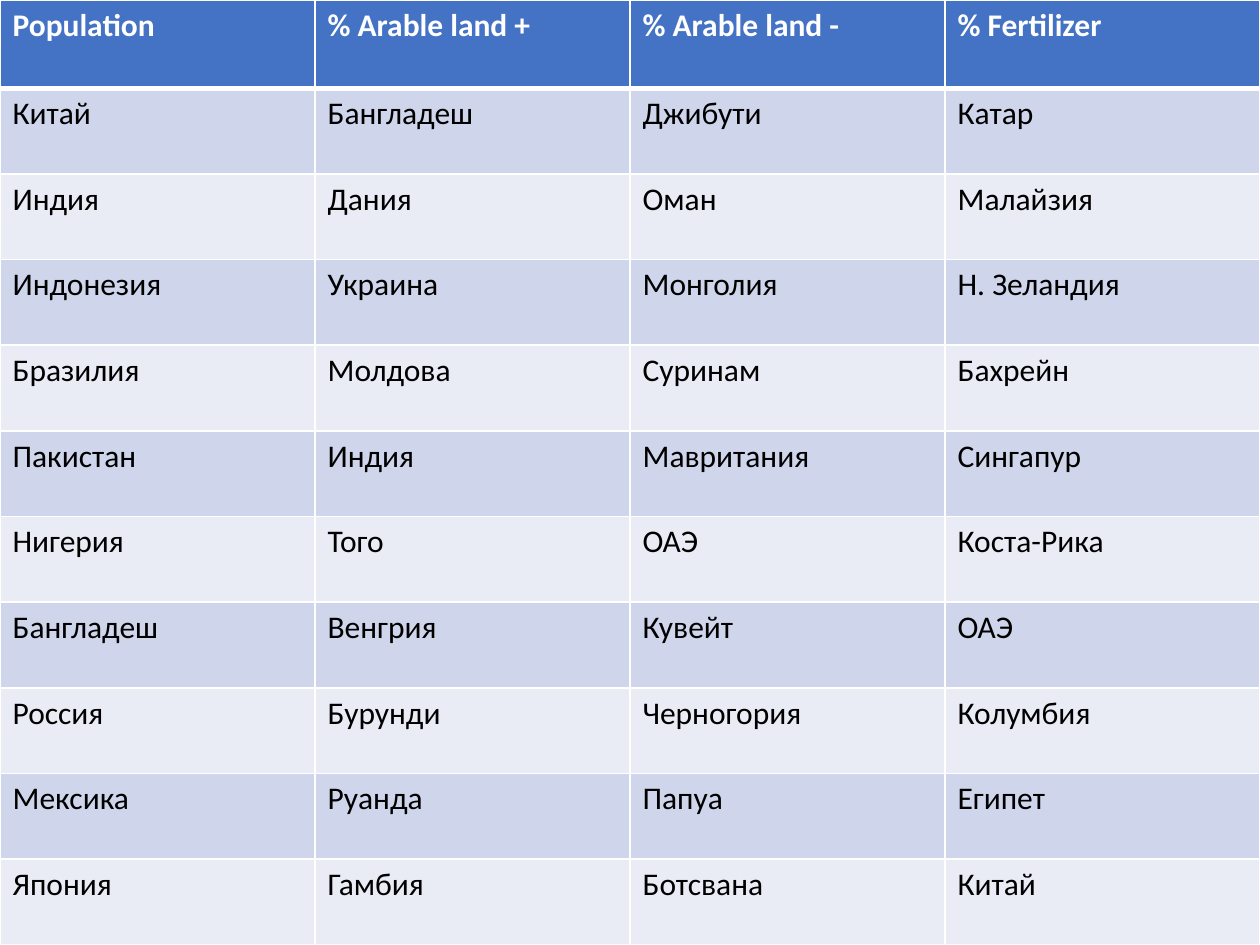
import pptx
import pptx.dml.color
import pptx.oxml
import pptx.oxml.ns
import pptx.util
from pptx.dml.color import RGBColor
from pptx.util import Inches

WHITE = RGBColor(0xFF, 0xFF, 0xFF)
BLACK = RGBColor(0x00, 0x00, 0x00)
BLUE = RGBColor(0x44, 0x72, 0xC4)
BAND_DARK = RGBColor(0xCF, 0xD5, 0xEA)
BAND_LIGHT = RGBColor(0xE9, 0xEB, 0xF5)

HEADER = ["Population", "% Arable land +", "% Arable land -", "% Fertilizer"]
COUNTRIES = [
    ["Китай", "Бангладеш", "Джибути", "Катар"],
    ["Индия", "Дания", "Оман", "Малайзия"],
    ["Индонезия", "Украина", "Монголия", "Н. Зеландия"],
    ["Бразилия", "Молдова", "Суринам", "Бахрейн"],
    ["Пакистан", "Индия", "Мавритания", "Сингапур"],
    ["Нигерия", "Того", "ОАЭ", "Коста-Рика"],
    ["Бангладеш", "Венгрия", "Кувейт", "ОАЭ"],
    ["Россия", "Бурунди", "Черногория", "Колумбия"],
    ["Мексика", "Руанда", "Папуа", "Египет"],
    ["Япония", "Гамбия", "Ботсвана", "Китай"],
]


class SlideBuilder:
    font = "Calibri"
    size = pptx.util.Pt(18)
    line_color = WHITE

    def __init__(self, prs):
        self.s = prs.slides.add_slide(prs.slide_layouts[6])

    def border(self, cell, side, width):
        """Draw one edge of a cell; side is L, R, T or B, width is in points."""
        ns = pptx.oxml.ns.nsdecls("a")
        cell._tc.get_or_add_tcPr().append(pptx.oxml.parse_xml(
            f'<a:ln{side} {ns} w="{pptx.util.Pt(width)}"><a:solidFill>'
            f'<a:srgbClr val="{self.line_color}"/></a:solidFill></a:ln{side}>'))

    def cell(self, cell, text, fill, color, bold, top, bottom):
        # The schema wants borders ahead of the fill.
        for side, width in (("L", 1), ("R", 1), ("T", top), ("B", bottom)):
            self.border(cell, side, width)
        cell.fill.solid()
        cell.fill.fore_color.rgb = fill
        r = cell.text_frame.paragraphs[0].add_run()
        r.text = text
        r.font.name = self.font
        r.font.size = self.size
        r.font.bold = bold
        r.font.color.rgb = color

    def table(self, header, body, left, top, width, header_height, row_height):
        rows = [header] + body
        height = header_height + row_height * len(body)
        table = self.s.shapes.add_table(
            len(rows), len(header), left, top, width, height).table
        for column in table.columns:
            column.width = width // len(header)
        for i, texts in enumerate(rows):
            is_header = i == 0
            table.rows[i].height = header_height if is_header else row_height
            band = BAND_DARK if i % 2 else BAND_LIGHT
            for j, text in enumerate(texts):
                self.cell(table.cell(i, j), text,
                          fill=BLUE if is_header else band,
                          color=WHITE if is_header else BLACK,
                          bold=is_header,
                          top=3 if i == 1 else 1,
                          bottom=3 if is_header else 1)


def main():
    prs = pptx.Presentation()
    prs.slide_width = Inches(10)
    prs.slide_height = Inches(7.5)
    builder = SlideBuilder(prs)
    builder.table(HEADER, COUNTRIES, Inches(0), Inches(0), Inches(10),
                  header_height=Inches(0.7), row_height=Inches(0.68))
    prs.save("out.pptx")


if __name__ == "__main__":
    main()
